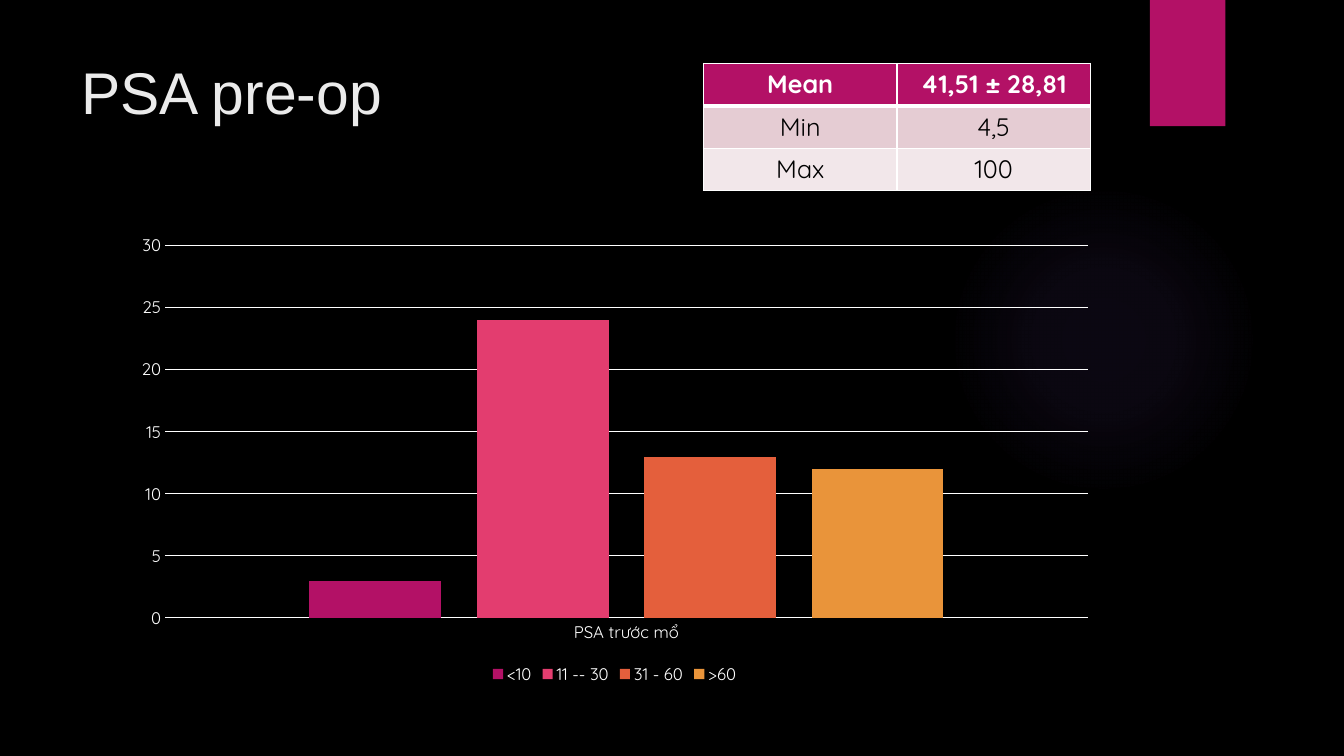
from lxml import etree
from pptx import Presentation
from pptx.chart.data import CategoryChartData
from pptx.dml.color import RGBColor
from pptx.enum.chart import XL_CHART_TYPE, XL_LEGEND_POSITION, XL_TICK_MARK
from pptx.enum.shapes import MSO_SHAPE
from pptx.enum.text import PP_ALIGN
from pptx.oxml import parse_xml
from pptx.oxml.ns import nsdecls, qn
from pptx.util import Cm, Pt

COLORS = {
    "black": "000000", "white": "FFFFFF", "title": "EBEBEB", "glow": "9B6BF2",
    "magenta": "B31166", "pink": "E33D6F", "orange": "E45F3C", "amber": "E9943A",
    "band_dark": "E5CCD3", "band_light": "F2E7EA",
}
BODY_FONT = "Quicksand"
STATS = [("Mean", "41,51 ± 28,81"), ("Min", "4,5"), ("Max", "100")]
PSA_GROUPS = [("<10", 3, "magenta"), ("11 -- 30", 24, "pink"),
              ("31 - 60", 13, "orange"), (">60", 12, "amber")]


def rgb(name):
    return RGBColor.from_string(COLORS[name])


def set_font(font, color, **values):
    for key, value in values.items():
        setattr(font, key, value)
    font.color.rgb = rgb(color)


def paint(fill, color):
    fill.solid()
    fill.fore_color.rgb = rgb(color)


def add_plain_shape(s, kind, box, color):
    sp = s.shapes.add_shape(kind, *map(Cm, box))
    sp.shadow.inherit = False
    sp.line.fill.background()
    paint(sp.fill, color)
    return sp


def add_glow(s, box):
    sp = add_plain_shape(s, MSO_SHAPE.OVAL, box, "glow")
    stops = "".join(
        f'<a:gs pos="{pos * 1000}"><a:srgbClr val="{COLORS["glow"]}">'
        f'<a:alpha val="{alpha * 1000}"/></a:srgbClr></a:gs>'
        for pos, alpha in [(0, 7), (36, 6), (69, 0)])
    grad = parse_xml(
        f'<a:gradFill {nsdecls("a")} rotWithShape="1"><a:gsLst>{stops}</a:gsLst>'
        '<a:path path="circle"><a:fillToRect l="50000" t="50000" r="50000" b="50000"/>'
        '</a:path></a:gradFill>')
    solid = sp._element.spPr.find(qn("a:solidFill"))
    solid.getparent().replace(solid, grad)


def add_title(s, text, box):
    tf = s.shapes.add_textbox(*map(Cm, box)).text_frame
    tf.word_wrap = True
    r = tf.paragraphs[0].add_run()
    r.text = text
    set_font(r.font, "title", name="Arial", size=Pt(42))


def set_borders(cell, widths):
    tc_pr = cell._tc.get_or_add_tcPr()
    for side, width in widths.items():
        ln = etree.SubElement(tc_pr, qn(f"a:ln{side}"), w=str(Pt(width)))
        fill = etree.SubElement(ln, qn("a:solidFill"))
        etree.SubElement(fill, qn("a:srgbClr"), val=COLORS["white"])


def add_stats_table(s, rows, box):
    table = s.shapes.add_table(len(rows), len(rows[0]), *map(Cm, box)).table
    fills = ["magenta", "band_dark", "band_light"]
    for i, row in enumerate(rows):
        for j, text in enumerate(row):
            cell = table.cell(i, j)
            set_borders(cell, {"L": 1, "R": 1, "T": 3 if i == 1 else 1,
                               "B": 3 if i == 0 else 1})
            paint(cell.fill, fills[i])
            p = cell.text_frame.paragraphs[0]
            p.alignment = PP_ALIGN.CENTER
            r = p.add_run()
            r.text = text
            set_font(r.font, "black" if i else "white",
                     name=BODY_FONT, size=Pt(18), bold=i == 0)


def style_axis(axis):
    axis.major_tick_mark = axis.minor_tick_mark = XL_TICK_MARK.NONE
    set_font(axis.tick_labels.font, "white", name=BODY_FONT, size=Pt(12))


def style_line(line):
    line.color.rgb = rgb("white")
    line.width = Pt(0.75)


def add_psa_chart(s, groups, box):
    data = CategoryChartData()
    data.categories = ["PSA trước mổ"]
    for name, count, _ in groups:
        data.add_series(name, [count])
    chart = s.shapes.add_chart(
        XL_CHART_TYPE.COLUMN_CLUSTERED, *map(Cm, box), data).chart
    chart.has_title = False
    set_font(chart.font, "white", name=BODY_FONT, size=Pt(10))

    # Columns
    plot = chart.plots[0]
    plot.gap_width, plot.overlap, plot.vary_by_categories = 219, -27, False
    for series, (_, _, color) in zip(plot.series, groups):
        paint(series.format.fill, color)
        series.invert_if_negative = False

    # Axes
    counts = chart.value_axis
    style_axis(chart.category_axis)
    style_axis(counts)
    style_line(chart.category_axis.format.line)
    counts.format.line.fill.background()
    style_line(counts.major_gridlines.format.line)
    counts.minimum_scale, counts.maximum_scale, counts.major_unit = 0, 30, 5

    # Legend
    chart.has_legend = True
    chart.legend.position = XL_LEGEND_POSITION.BOTTOM
    chart.legend.include_in_layout = False
    set_font(chart.legend.font, "white", name=BODY_FONT, size=Pt(12))


def main():
    prs = Presentation()
    prs.slide_width, prs.slide_height = Cm(33.87), Cm(19.05)
    s = prs.slides.add_slide(prs.slide_layouts[6])

    # Backdrop
    paint(s.background.fill, "black")
    add_glow(s, (23.9, 4.65, 7.82, 7.82))
    add_plain_shape(s, MSO_SHAPE.RECTANGLE, (28.98, 0, 1.9, 3.18), "magenta")

    # Content
    add_title(s, "PSA pre-op", (1.8, 1.27, 26.14, 3.89))
    add_stats_table(s, STATS, (17.73, 1.6, 9.75, 3.2))
    add_psa_chart(s, PSA_GROUPS, (3.07, 5.69, 24.84, 11.66))

    prs.save("out.pptx")


if __name__ == "__main__":
    main()
